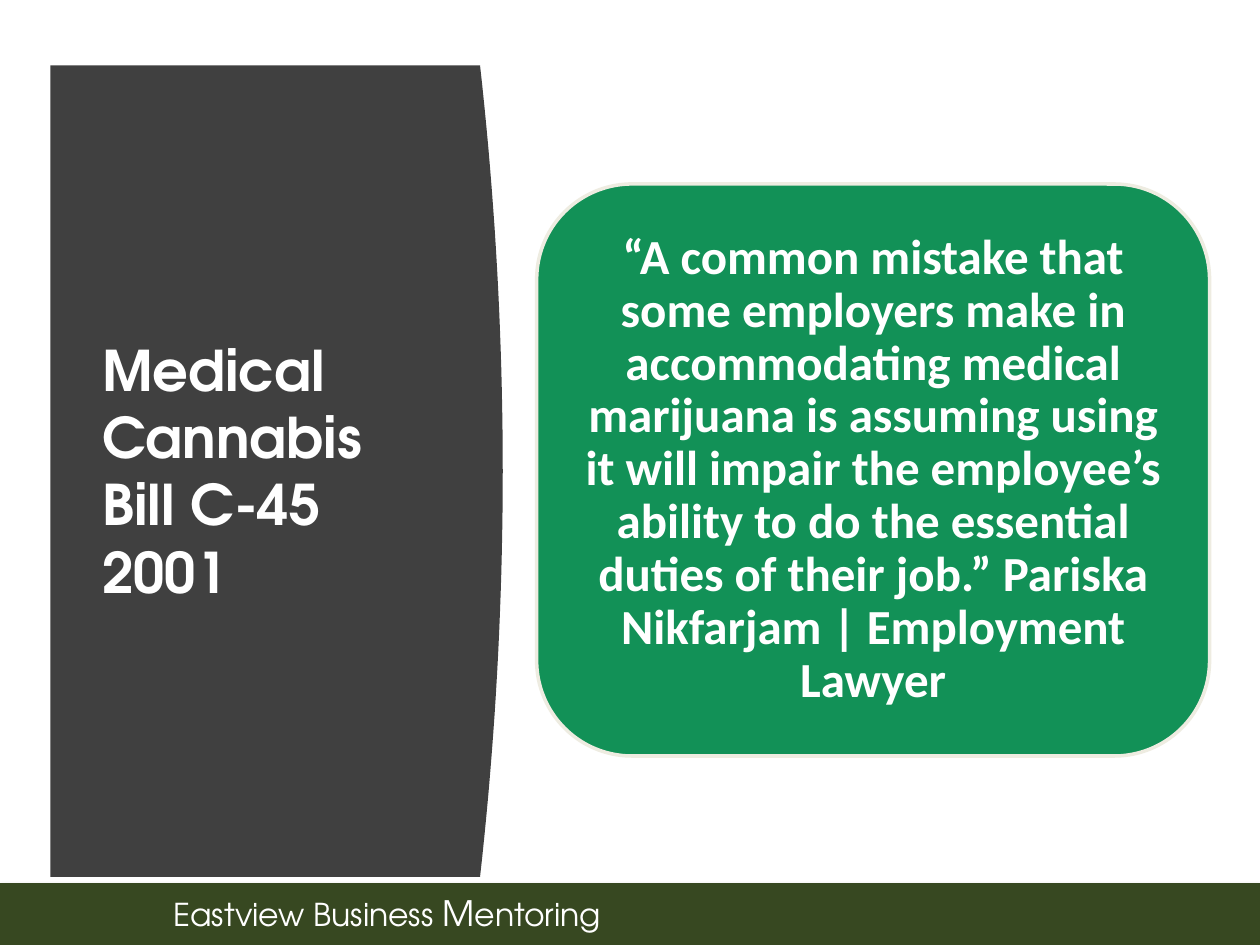
"""Build a quotation slide with a curved title panel and a footer band."""
from dataclasses import dataclass

from lxml import etree
from pptx import Presentation
from pptx.dml.color import RGBColor
from pptx.enum.shapes import MSO_SHAPE
from pptx.enum.text import MSO_ANCHOR, MSO_AUTO_SIZE, PP_ALIGN
from pptx.oxml.ns import qn
from pptx.util import Emu, Inches, Pt

RECTANGLE, ROUNDED = MSO_SHAPE.RECTANGLE, MSO_SHAPE.ROUNDED_RECTANGLE
LEFT, CENTER = PP_ALIGN.LEFT, PP_ALIGN.CENTER
MIDDLE = MSO_ANCHOR.MIDDLE
NO_AUTOFIT = MSO_AUTO_SIZE.NONE
WIDTH, HEIGHT = Inches(10), Inches(7.5)
HEADING_FONT, QUOTE_FONT = "TeX Gyre Adventor", "Calibri"
WHITE, CHARCOAL, GREEN, OLIVE, CREAM = "FFFFFF", "404040", "129157", "374821", "EEECE1"
CURVE_STEPS = 40

QUOTE = (
    "“A common mistake that some employers make in accommodating medical marijuana "
    "is assuming using it will impair the employee’s ability to do the essential "
    "duties of their job.” Pariska Nikfarjam | Employment Lawyer"
)


@dataclass(frozen=True)
class Area:
    """Place on the slide, in percent of its width and height."""

    left: float
    top: float
    width: float
    height: float

    def emu(self) -> tuple[Emu, Emu, Emu, Emu]:
        """Return left, top, width and height as lengths."""
        return (
            Emu(int(WIDTH * self.left / 100)),
            Emu(int(HEIGHT * self.top / 100)),
            Emu(int(WIDTH * self.width / 100)),
            Emu(int(HEIGHT * self.height / 100)),
        )


PANEL = Area(4, 6.93, 35.9, 85.87)
PANEL_BULGE = 1.8
TITLE = Area(7.1, 14.8, 28, 69.87)
CARD = Area(42.6, 19.47, 53.4, 60.53)
BAND = Area(0, 93.47, 100, 6.53)
BAND_LABEL = Area(12.8, 93.6, 36.6, 5.87)


def color(hex_value: str) -> RGBColor:
    """Turn a hex string into a colour."""
    return RGBColor.from_string(hex_value)


def paint(shape, fill: str, line: str | None = None, line_width: float = 0) -> None:
    """Give a shape a flat fill and an optional outline, without shadow."""
    shape.shadow.inherit = False
    shape.fill.solid()
    shape.fill.fore_color.rgb = color(fill)
    if line:
        shape.line.color.rgb = color(line)
        shape.line.width = Pt(line_width)
    else:
        shape.line.fill.background()


def write(frame, runs: list[tuple[str, float]], *, font: str, bold: bool = False,
          align=LEFT, spacing: float | None = None, margin: float | None = None,
          wrap: bool = True) -> None:
    """Write one paragraph of sized white runs, centred vertically."""
    frame.auto_size = NO_AUTOFIT
    frame.word_wrap = wrap
    frame.vertical_anchor = MIDDLE
    if margin is not None:
        frame.margin_left = frame.margin_right = Inches(margin)
        frame.margin_top = frame.margin_bottom = Inches(margin)
    paragraph = frame.paragraphs[0]
    paragraph.alignment = align
    if spacing:
        paragraph.line_spacing = spacing
    for text, size in runs:
        run = paragraph.add_run()
        run.text = text
        run.font.name = font
        run.font.size = Pt(size)
        run.font.bold = bold
        run.font.color.rgb = color(WHITE)


def add_drop_shadow(shape, blur: float, distance: float, opacity: int) -> None:
    """Add a downward black shadow, with lengths in points."""
    effects = shape.element.spPr.find(qn("a:effectLst"))
    shadow = etree.SubElement(
        effects, qn("a:outerShdw"), blurRad=str(Pt(blur)), dist=str(Pt(distance)),
        dir="5400000", rotWithShape="0")
    black = etree.SubElement(shadow, qn("a:srgbClr"), val="000000")
    etree.SubElement(black, qn("a:alpha"), val=str(opacity * 1000))


def add_panel(slide) -> None:
    """Draw the title panel, whose right edge bulges as a parabola."""
    left, top, width, height = PANEL.emu()
    bulge = WIDTH * PANEL_BULGE / 100
    edge = []
    for step in range(CURVE_STEPS + 1):
        share = step / CURVE_STEPS
        inset = bulge * (2 * share - 1) ** 2
        edge.append((int(left + width - inset), int(top + height * share)))
    builder = slide.shapes.build_freeform(left, top)
    builder.add_line_segments(edge + [(left, top + height)], close=True)
    paint(builder.convert_to_shape(), CHARCOAL)


def add_title(slide) -> None:
    """Place the title in front of its panel."""
    title = slide.shapes.title
    title.left, title.top, title.width, title.height = TITLE.emu()
    write(title.text_frame, [("Medical Cannabis Bill C-45 2001", 32)],
          font=HEADING_FONT, bold=True)
    title.element.getparent().append(title.element)


def add_footer(slide) -> None:
    """Draw the footer band with the business name."""
    band = slide.shapes.add_shape(RECTANGLE, *BAND.emu())
    paint(band, OLIVE)
    add_drop_shadow(band, blur=3.1, distance=1.8, opacity=35)
    label = slide.shapes.add_textbox(*BAND_LABEL.emu())
    write(label.text_frame, [("Eastview Business ", 18), ("M", 20), ("entoring", 18)],
          font=HEADING_FONT, wrap=False)


def add_quote(slide) -> None:
    """Draw the rounded card with the quotation."""
    card = slide.shapes.add_shape(ROUNDED, *CARD.emu())
    paint(card, GREEN, CREAM, 2)
    write(card.text_frame, [(QUOTE, 28)], font=QUOTE_FONT, bold=True,
          align=CENTER, spacing=0.9, margin=0.12)


def main() -> None:
    """Build and save the presentation."""
    deck = Presentation()
    deck.slide_width, deck.slide_height = WIDTH, HEIGHT
    slide = deck.slides.add_slide(deck.slide_layouts.get_by_name("Title Only"))
    add_footer(slide)
    add_panel(slide)
    add_title(slide)
    add_quote(slide)
    deck.save("out.pptx")


if __name__ == "__main__":
    main()
